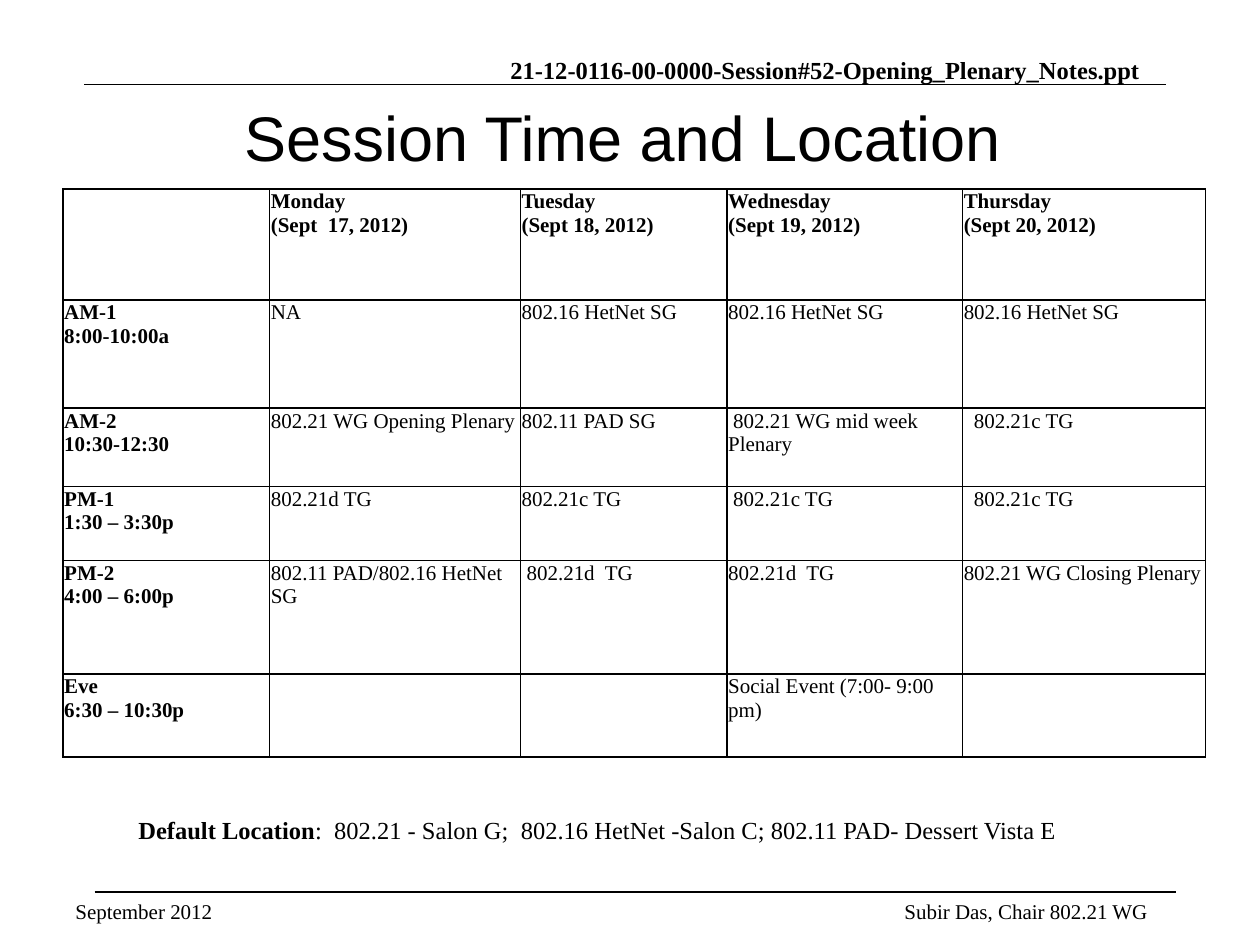
from lxml import etree
from pptx import Presentation
from pptx.dml.color import RGBColor
from pptx.enum.shapes import MSO_CONNECTOR
from pptx.enum.text import MSO_ANCHOR, PP_ALIGN
from pptx.oxml.ns import qn
from pptx.util import Inches, Pt

LEFT, CENTER, RIGHT = PP_ALIGN.LEFT, PP_ALIGN.CENTER, PP_ALIGN.RIGHT
TOP, MIDDLE, BOTTOM = MSO_ANCHOR.TOP, MSO_ANCHOR.MIDDLE, MSO_ANCHOR.BOTTOM
STRAIGHT = MSO_CONNECTOR.STRAIGHT
COLORS = {"ink": "000000"}
SERIF, SANS = "Times New Roman", "Arial"
SPACE = 0.04  # width of one leading space at 12 pt

COLS = [1.64, 1.99, 1.64, 1.87, 1.93]
ROWS = [0.88, 0.86, 0.62, 0.59, 0.9, 0.66]
HETNET = "802.16 HetNet SG"
# A cell is its text, or its text and the number of spaces to indent it by.
PLAN = [
    ["", "Monday\n(Sept  17, 2012)", "Tuesday\n(Sept 18, 2012)",
     "Wednesday\n(Sept 19, 2012)", "Thursday\n(Sept 20, 2012)"],
    ["AM-1\n8:00-10:00a", "NA", HETNET, HETNET, HETNET],
    ["AM-2\n10:30-12:30", "802.21 WG Opening Plenary", "802.11 PAD SG",
     ("802.21 WG mid week Plenary", 1), ("802.21c TG", 2)],
    ["PM-1\n1:30 – 3:30p", "802.21d TG", "802.21c TG",
     ("802.21c TG", 1), ("802.21c TG", 2)],
    ["PM-2\n4:00 – 6:00p", "802.11 PAD/802.16 HetNet  SG",
     ("802.21d  TG", 1), "802.21d  TG", "802.21 WG Closing Plenary"],
    ["Eve\n6:30 – 10:30p", "", "", "Social Event (7:00- 9:00 pm)", ""],
]


def write(frame, text, size=12, bold=False, font=SERIF, align=LEFT, lead="",
          indent=0):
    """Fill a frame, one paragraph a line; lead is a bold opening run."""
    for i, line in enumerate(text.split("\n")):
        para = frame.add_paragraph() if i else frame.paragraphs[0]
        para.alignment = align
        if indent:
            para._p.get_or_add_pPr().set("indent", str(Inches(indent)))
        parts = [(lead, True)] if lead and not i else []
        for words, heavy in parts + [(line, bold)]:
            run = para.add_run()
            run.text = words
            run.font.size = Pt(size)
            run.font.bold = heavy
            run.font.name = font
            run.font.color.rgb = RGBColor.from_string(COLORS["ink"])


def add_text(slide, box, text, anchor=TOP, wrap=True, inset=(0.1, 0.05),
             **style):
    frame = slide.shapes.add_textbox(*map(Inches, box)).text_frame
    frame.word_wrap = wrap
    frame.vertical_anchor = anchor
    frame.margin_left = frame.margin_right = Inches(inset[0])
    frame.margin_top = frame.margin_bottom = Inches(inset[1])
    write(frame, text, **style)


def add_rule(slide, x, y, width):
    rule = slide.shapes.add_connector(
        STRAIGHT, Inches(x), Inches(y), Inches(x + width), Inches(y))
    rule.line.color.rgb = RGBColor.from_string(COLORS["ink"])
    rule.line.width = Pt(1)
    etree.SubElement(rule._element.spPr, qn("a:effectLst"))


def add_edges(cell):
    """Draw all four borders of a cell; call before setting its fill."""
    props = cell._tc.get_or_add_tcPr()
    for side in ("lnL", "lnR", "lnT", "lnB"):
        edge = etree.SubElement(props, qn("a:" + side), w=str(Pt(1)))
        fill = etree.SubElement(edge, qn("a:solidFill"))
        etree.SubElement(fill, qn("a:srgbClr"), val=COLORS["ink"])


def add_plan(slide, x, y):
    size = Inches(sum(COLS)), Inches(sum(ROWS))
    table = slide.shapes.add_table(
        len(ROWS), len(COLS), Inches(x), Inches(y), *size).table
    for col, width in zip(table.columns, COLS):
        col.width = Inches(width)
    for r, (row, height) in enumerate(zip(PLAN, ROWS)):
        table.rows[r].height = Inches(height)
        for c, item in enumerate(row):
            cell = table.cell(r, c)
            add_edges(cell)
            cell.fill.background()
            cell.margin_left = cell.margin_right = Inches(0.01)
            cell.margin_top, cell.margin_bottom = Inches(0.01), 0
            text, gap = item if isinstance(item, tuple) else (item, 0)
            if text:
                write(cell.text_frame, text, bold=r == 0 or c == 0,
                      indent=gap * SPACE)


def main():
    deck = Presentation()
    deck.slide_width, deck.slide_height = Inches(10), Inches(7.5)
    slide = deck.slides.add_slide(deck.slide_layouts[6])

    add_text(slide, (3.52, 0.43, 5.53, 0.24),
             "21-12-0116-00-0000-Session#52-Opening_Plenary_Notes.ppt",
             size=14, bold=True, align=RIGHT, anchor=BOTTOM, wrap=False,
             inset=(0, 0))
    add_rule(slide, 0.67, 0.67, 8.58)
    add_rule(slide, 0.75, 7.08, 8.58)
    add_text(slide, (0.69, 0.67, 8.5, 0.82), "Session Time and Location",
             size=36, font=SANS, align=CENTER, anchor=MIDDLE)
    add_plan(slide, 0.5, 1.5)
    add_text(slide, (1, 6.42, 8, 0.34),
             ":  802.21 - Salon G;  802.16 HetNet -Salon C; "
             "802.11 PAD- Dessert Vista E",
             size=14, lead="Default Location")
    add_text(slide, (7.08, 7.08, 2.33, 0.28), "Subir Das, Chair 802.21 WG")
    add_text(slide, (0.5, 7.08, 1.58, 0.25), "September 2012")

    deck.save("out.pptx")


if __name__ == "__main__":
    main()
